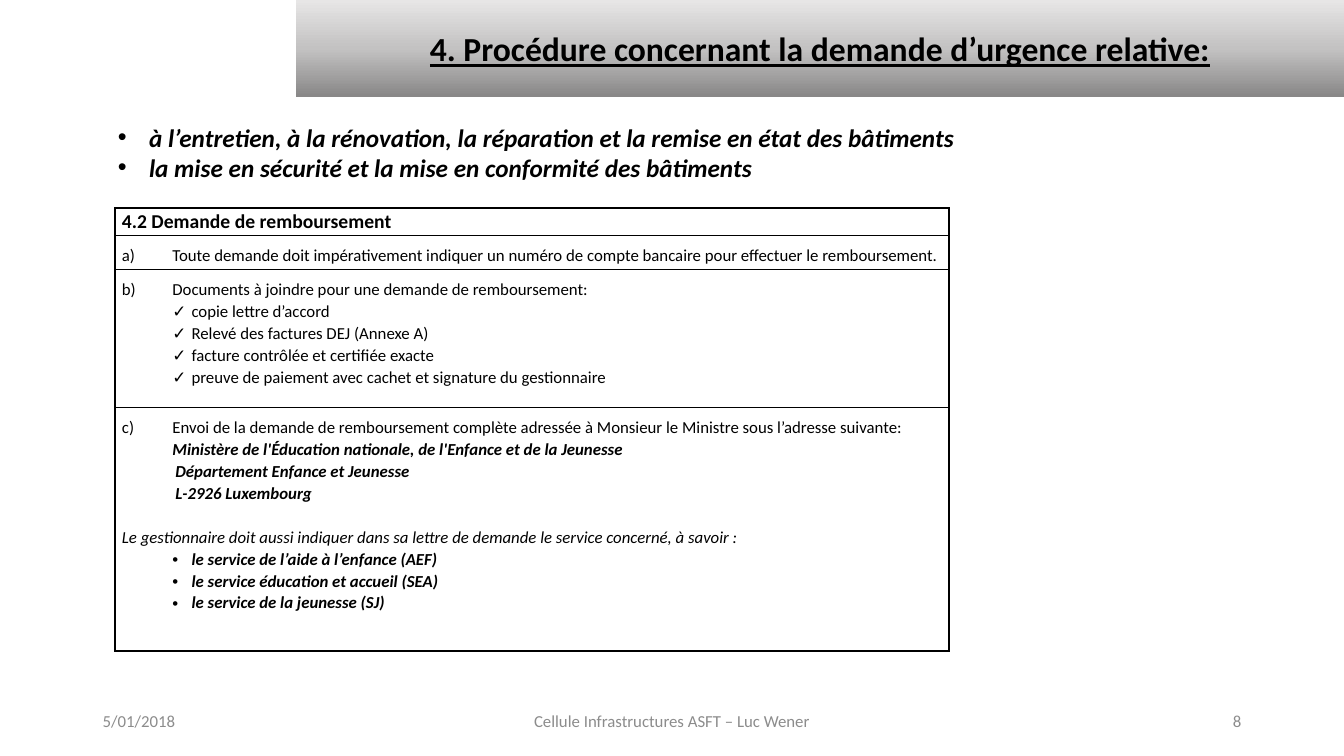
"""Build the slide on the refund procedure for urgent building requests."""
from lxml import etree
from pptx import Presentation, util as u
from pptx.dml.color import RGBColor
from pptx.enum import shapes, text
from pptx.oxml import parse_xml
from pptx.oxml.ns import qn

THEME = dict(font="Calibri", ink="000000", gray="8C8C8C",
             fade=((1, "898888"), (50, "C3C2C2"), (100, "E7E6E6")),
             head=24, lead=18, title=14, body=12)
NS = 'xmlns:a="http://schemas.openxmlformats.org/drawingml/2006/main"'

deck = Presentation()
deck.slide_width, deck.slide_height = u.Inches(13.33), u.Inches(7.5)
slide = deck.slides.add_slide(deck.slide_layouts[6])


def area(x, y, w, h):
    """Turn percentages of the slide into lengths."""
    wide, high = deck.slide_width / 100, deck.slide_height / 100
    return int(x * wide), int(y * high), int(w * wide), int(h * high)


def write(frame, items, size, color="ink"):
    """Fill a frame with (text, options) paragraphs."""
    frame.word_wrap = True
    for i, (words, opt) in enumerate(items):
        para = frame.paragraphs[0] if i == 0 else frame.add_paragraph()
        para.text = words
        para.alignment = opt.get("align", text.PP_ALIGN.LEFT)
        para.line_spacing = opt.get("line", 1.0)
        if "gap" in opt:
            para.space_before = u.Pt(opt["gap"])
        props = para._p.get_or_add_pPr()
        left, hang = opt.get("indent", (0, 0))
        props.set("marL", str(u.Inches(left)))
        props.set("indent", str(-u.Inches(hang)))
        if "mark" in opt:
            etree.SubElement(props, qn("a:buFont"), typeface="Arial")
            etree.SubElement(props, qn("a:buChar"), char=opt["mark"])
        if "tab" in opt:
            tabs = etree.SubElement(props, qn("a:tabLst"))
            etree.SubElement(tabs, qn("a:tab"), pos=str(u.Inches(opt["tab"])), algn="l")
        font = para.font
        font.name, font.size = THEME["font"], u.Pt(size)
        font.color.rgb = RGBColor.from_string(THEME[color])
        font.bold, font.italic = "b" in opt.get("look", ""), "i" in opt.get("look", "")
        font.underline = "u" in opt.get("look", "")


side, foot = 6.9, 22.5
mid = 33.76
align = text.PP_ALIGN
for x, w, words, way in (
        (side, foot, "5/01/2018", align.LEFT),
        (50 - mid / 2, mid, "Cellule Infrastructures ASFT – Luc Wener", align.CENTER),
        (100 - side - foot, foot, "8", align.RIGHT)):
    note = slide.shapes.add_textbox(*area(x, 92.67, w, 5.33)).text_frame
    note.vertical_anchor = text.MSO_ANCHOR.MIDDLE
    write(note, [(words, dict(align=way))], THEME["body"], "gray")

band = slide.shapes.add_shape(shapes.MSO_SHAPE.RECTANGLE, *area(22, 0, 78, 12.83))
band.shadow.inherit = False
band.line.fill.background()
stops = "".join(f'<a:gs pos="{at * 1000}"><a:srgbClr val="{hue}"/></a:gs>'
                for at, hue in THEME["fade"])
band._element.spPr.find(qn("a:prstGeom")).addnext(parse_xml(
    f'<a:gradFill {NS} rotWithShape="1"><a:gsLst>{stops}</a:gsLst>'
    '<a:lin ang="16200000" scaled="0"/></a:gradFill>'))
band.text_frame.vertical_anchor = text.MSO_ANCHOR.MIDDLE
write(band.text_frame, [("4. Procédure concernant la demande d’urgence relative:",
                         dict(align=align.CENTER, look="bu"))], THEME["head"])

lead = dict(look="bi", mark="•", indent=(0.31, 0.31))
goals = slide.shapes.add_textbox(*area(8.03, 15.47, 66.54, 9.47)).text_frame
write(goals, [
    ("à l’entretien, à la rénovation, la réparation et la remise en état des bâtiments", lead),
    ("la mise en sécurité et la mise en conformité des bâtiments", lead)], THEME["lead"])

line = 1.07
check = dict(line=line, mark="✓", indent=(0.69, 0.19))
dot = dict(check, mark="•", look="bi")
home = dict(line=line, look="bi", indent=(0.53, 0))
rows = (
    (3.6, THEME["title"], [("4.2 Demande de remboursement", dict(line=line, look="b"))]),
    (4.5, THEME["body"], [
        ("a)\tToute demande doit impérativement indiquer un numéro de compte bancaire "
         "pour effectuer le remboursement.", dict(line=1.5, tab=0.36))]),
    (18.25, THEME["body"], [
        ("b)\tDocuments à joindre pour une demande de remboursement:", dict(line=1.5, tab=0.37)),
        ("copie lettre d’accord", check),
        ("Relevé des factures DEJ (Annexe A)", check),
        ("facture contrôlée et certifiée exacte", check),
        ("preuve de paiement avec cachet et signature du gestionnaire", check)]),
    (32.25, THEME["body"], [
        ("c)\tEnvoi de la demande de remboursement complète adressée à Monsieur le Ministre "
         "sous l’adresse suivante:", dict(line=1.5, tab=0.31)),
        ("Ministère de l'Éducation nationale, de l'Enfance et de la Jeunesse",
         dict(home, indent=(0.5, 0))),
        ("Département Enfance et Jeunesse", home),
        ("L-2926 Luxembourg", home),
        ("Le gestionnaire doit aussi indiquer dans sa lettre de demande le service concerné, "
         "à savoir\u00a0:".replace("\u00a0", " "), dict(line=line, look="i", gap=15.7)),
        ("le service de l’aide à l’enfance (AEF)", dot),
        ("le service éducation et accueil (SEA)", dot),
        ("le service de la jeunesse (SJ)", dot)]))
total = sum(row[0] for row in rows)
table = slide.shapes.add_table(len(rows), 1, *area(8.55, 27.55, 62.05, total)).table
table.first_row = table.horz_banding = False
for i, (high, size, items) in enumerate(rows):
    table.rows[i].height = area(0, 0, 0, high)[3]
    cell = table.cell(i, 0)
    cell.margin_left = cell.margin_right = u.Inches(0.07)
    cell.margin_top = cell.margin_bottom = 0
    cell.fill.background()
    write(cell.text_frame, items, size)
    edges = dict(L=1.5, R=1.5, T=0.75 if i else 1.5, B=0.75 if i < len(rows) - 1 else 1.5)
    for k, (edge, thick) in enumerate(edges.items()):
        cell._tc.get_or_add_tcPr().insert(k, parse_xml(
            f'<a:ln{edge} {NS} w="{u.Pt(thick)}"><a:solidFill>'
            f'<a:srgbClr val="{THEME["ink"]}"/></a:solidFill></a:ln{edge}>'))

deck.save("out.pptx")
